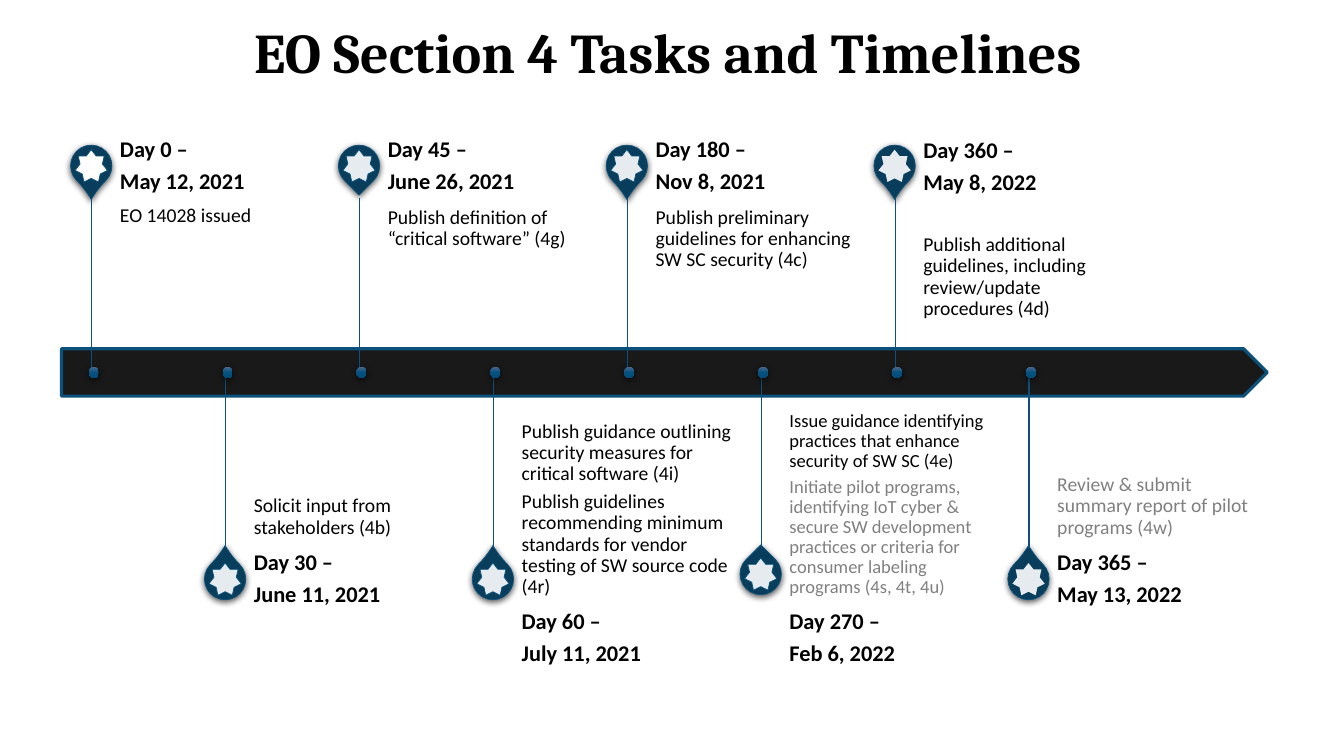
"""Build the timeline slide of the EO Section 4 tasks."""
from copy import deepcopy
from dataclasses import dataclass

from lxml.etree import SubElement
from pptx import Presentation
from pptx.dml.color import RGBColor
from pptx.enum.shapes import MSO_CONNECTOR, MSO_SHAPE
from pptx.enum.text import MSO_ANCHOR, MSO_AUTO_SIZE, PP_ALIGN
from pptx.oxml.ns import qn
from pptx.util import Inches, Pt

BLACK = RGBColor(0x00, 0x00, 0x00)
WHITE = RGBColor(0xFF, 0xFF, 0xFF)
GRAY = RGBColor(0x80, 0x80, 0x80)
NAVY = RGBColor(0x08, 0x3D, 0x5C)
BLUE = RGBColor(0x0B, 0x51, 0x7B)
DOT_COLORS = (RGBColor(0x4B, 0x69, 0x8C), RGBColor(0x05, 0x52, 0x81), RGBColor(0x00, 0x4A, 0x77))

FIRST_LEFT, STEP = 0.7, 1.328
AXIS_Y = 3.7
PIN_SIZE, STAR_SIZE = 0.41, 0.32
TEXT_WIDTH, TASK_HEIGHT = 2.09, 1.74


@dataclass
class Event:
    """One dated event with its tasks as pairs of text and colour."""
    dates: tuple
    tasks: tuple
    date_top: float
    task_top: float
    pin_top: float
    line_width: float = 0.5
    date_height: float = 0.61
    date_anchor: MSO_ANCHOR = MSO_ANCHOR.MIDDLE
    task_height: float = TASK_HEIGHT
    task_size: float = 14
    pin_point: float = 1.15
    star_alpha: int = 90
    star_outline: bool = True


EVENTS = (
    Event(("Day 0 –", "May 12, 2021"), (("EO 14028 issued", BLACK),),
          1.34, 1.96, 1.44, line_width=1, star_alpha=100),
    Event(("Day 30 –", "June 11, 2021"), (("Solicit input from stakeholders (4b)", BLACK),),
          5.44, 3.7, 5.54),
    Event(("Day 45 –", "June 26, 2021"),
          (("Publish definition of “critical software” (4g)", BLACK),),
          1.34, 1.96, 1.44, line_width=1, pin_point=1),
    Event(("Day 60 –", "July 11, 2021"),
          (("Publish guidance outlining security measures for critical software (4i)", BLACK),
           ("Publish guidelines recommending minimum standards for vendor testing of "
            "SW source code (4r)", BLACK)),
          6.03, 4.29, 5.54),
    Event(("Day 180 –", "Nov 8, 2021"),
          (("Publish preliminary guidelines for enhancing SW SC security (4c)", BLACK),),
          1.34, 1.96, 1.44),
    Event(("Day 270 –", "Feb 6, 2022"),
          (("Issue guidance identifying practices that enhance security of SW SC (4e)", BLACK),
           ("Initiate pilot programs, identifying IoT cyber & secure SW development practices "
            "or criteria for consumer labeling programs (4s, 4t, 4u)", GRAY)),
          6.03, 4.29, 5.49, task_size=13.2, pin_point=1),
    Event(("Day 360 –", "May 8, 2022"),
          (("Publish additional guidelines, including review/update procedures (4d)", BLACK),),
          1.48, 2.23, 1.44, line_width=0.75, date_height=0.46,
          date_anchor=MSO_ANCHOR.BOTTOM, task_height=1.31, star_outline=False),
    Event(("Day 365 –", "May 13, 2022"),
          (("Review & submit summary report of pilot programs (4w)", GRAY),),
          5.44, 3.7, 5.54, line_width=1, star_outline=False),
)


def write(paragraph, text, *, size, color=BLACK, bold=False, font="Calibri", after=0.35):
    """Fill a paragraph with formatted text; after is a share of the size."""
    span = paragraph.add_run()
    span.text = text
    span.font.name = font
    span.font.size = Pt(size)
    span.font.bold = bold
    span.font.color.rgb = color
    paragraph.alignment = PP_ALIGN.LEFT
    paragraph.line_spacing = 0.9
    paragraph.space_before = Pt(0)
    paragraph.space_after = Pt(round(size * after, 1))


def add_text(page, lines, left, top, height, *, anchor, insets, size, bold=False):
    """Add a text box with one paragraph for each pair of text and colour."""
    box = page.shapes.add_textbox(Inches(left), Inches(top), Inches(TEXT_WIDTH), Inches(height))
    frame = box.text_frame
    frame.word_wrap = True
    frame.vertical_anchor = anchor
    frame.margin_left = 0
    frame.margin_top, frame.margin_right, frame.margin_bottom = map(Inches, insets)
    for index, (text, color) in enumerate(lines):
        paragraph = frame.add_paragraph() if index else frame.paragraphs[0]
        write(paragraph, text, size=size, color=color, bold=bold)


def add_figure(page, kind, left, top, width, height, *, fill=None, outline=None, alpha=100):
    """Add a preset shape without shadow."""
    figure = page.shapes.add_shape(kind, Inches(left), Inches(top), Inches(width), Inches(height))
    figure.shadow.inherit = False
    if fill is not None:
        figure.fill.solid()
        figure.fill.fore_color.rgb = fill
        if alpha < 100:
            color = figure._element.spPr.find(qn("a:solidFill"))[0]
            SubElement(color, qn("a:alpha"), val=str(alpha * 1000))
    if outline:
        figure.line.color.rgb = BLUE
        figure.line.width = Pt(outline)
    else:
        figure.line.fill.background()
    return figure


def cast_shadow(figure):
    """Give a shape a soft shadow below it."""
    effects = figure._element.spPr.find(qn("a:effectLst"))
    shadow = SubElement(effects, qn("a:outerShdw"), blurRad=str(Pt(4.5)), dist=str(Pt(1.5)),
                        dir="5400000", algn="ctr", rotWithShape="0")
    color = SubElement(shadow, qn("a:srgbClr"), val=str(BLACK))
    SubElement(color, qn("a:alpha"), val="63000")


def add_pin(page, left, event, above):
    """Add a teardrop that points to the axis and the star inside it."""
    pin = add_figure(page, MSO_SHAPE.TEAR, left, event.pin_top, PIN_SIZE, PIN_SIZE,
                     fill=NAVY, outline=0.5)
    pin.rotation = 135 if above else 315
    pin.adjustments[0] = event.pin_point
    cast_shadow(pin)
    inset = (PIN_SIZE - STAR_SIZE) / 2
    add_figure(page, MSO_SHAPE.STAR_7_POINT, left + inset, event.pin_top + inset,
               STAR_SIZE, STAR_SIZE, fill=WHITE, alpha=event.star_alpha,
               outline=0.5 if event.star_outline else None)


def add_stem(page, x, start, end, width):
    """Add the vertical line between a pin and the axis."""
    stem = page.shapes.add_connector(MSO_CONNECTOR.STRAIGHT, Inches(x), Inches(start),
                                     Inches(x), Inches(end))
    stem.line.color.rgb = BLUE
    stem.line.width = Pt(width)
    SubElement(stem._element.spPr, qn("a:effectLst"))


def add_dot(page, left):
    """Add the shaded dot that marks an event on the axis."""
    dot = add_figure(page, MSO_SHAPE.OVAL, left, AXIS_Y - 0.06, 0.1, 0.11)
    dot.fill.gradient()
    dot.fill.gradient_angle = 270
    stops = dot._element.spPr.find(qn("a:gradFill")).find(qn("a:gsLst"))
    stops.insert(1, deepcopy(stops[0]))
    for stop, color, position in zip(dot.fill.gradient_stops, DOT_COLORS, (0, 0.5, 1)):
        stop.color.rgb = color
        stop.position = position
    cast_shadow(dot)


def add_event(page, index, event):
    """Add an event: above the axis for even places, below for odd ones."""
    above = index % 2 == 0
    left = FIRST_LEFT + index * STEP
    add_pin(page, left, event, above)
    add_text(page, event.tasks, left + 0.49, event.task_top, event.task_height,
             anchor=MSO_ANCHOR.TOP if above else MSO_ANCHOR.BOTTOM,
             insets=(0.1, 0.1, 0.15) if above else (0.15, 0, 0.1), size=event.task_size)
    add_text(page, [(date, BLACK) for date in event.dates], left + 0.49, event.date_top,
             event.date_height, anchor=event.date_anchor, insets=(0, 0.11, 0), size=16, bold=True)
    start, end = (1.96, AXIS_Y) if above else (AXIS_Y, 5.44)
    add_stem(page, left + 0.21, start, end, event.line_width)
    add_dot(page, left + 0.18)


def add_title(page, text):
    """Place and format the title placeholder."""
    title = page.shapes.title
    title.left, title.top, title.width, title.height = map(Inches, (2.42, 0.2, 10, 1.45))
    frame = title.text_frame
    frame.auto_size = MSO_AUTO_SIZE.NONE
    frame.vertical_anchor = MSO_ANCHOR.TOP
    write(frame.paragraphs[0], text, size=40, bold=True, font="Cambria", after=0)


def main():
    """Build and save the deck."""
    deck = Presentation()
    deck.slide_width, deck.slide_height = Inches(13.33), Inches(7.5)
    page = deck.slides.add_slide(deck.slide_layouts[5])
    add_title(page, "EO Section 4 Tasks and Timelines")
    add_figure(page, MSO_SHAPE.PENTAGON, 0.61, 3.46, 11.96, 0.47,
               fill=BLACK, outline=2.25, alpha=90)
    for index, event in enumerate(EVENTS):
        add_event(page, index, event)
    deck.save("out.pptx")


if __name__ == "__main__":
    main()
